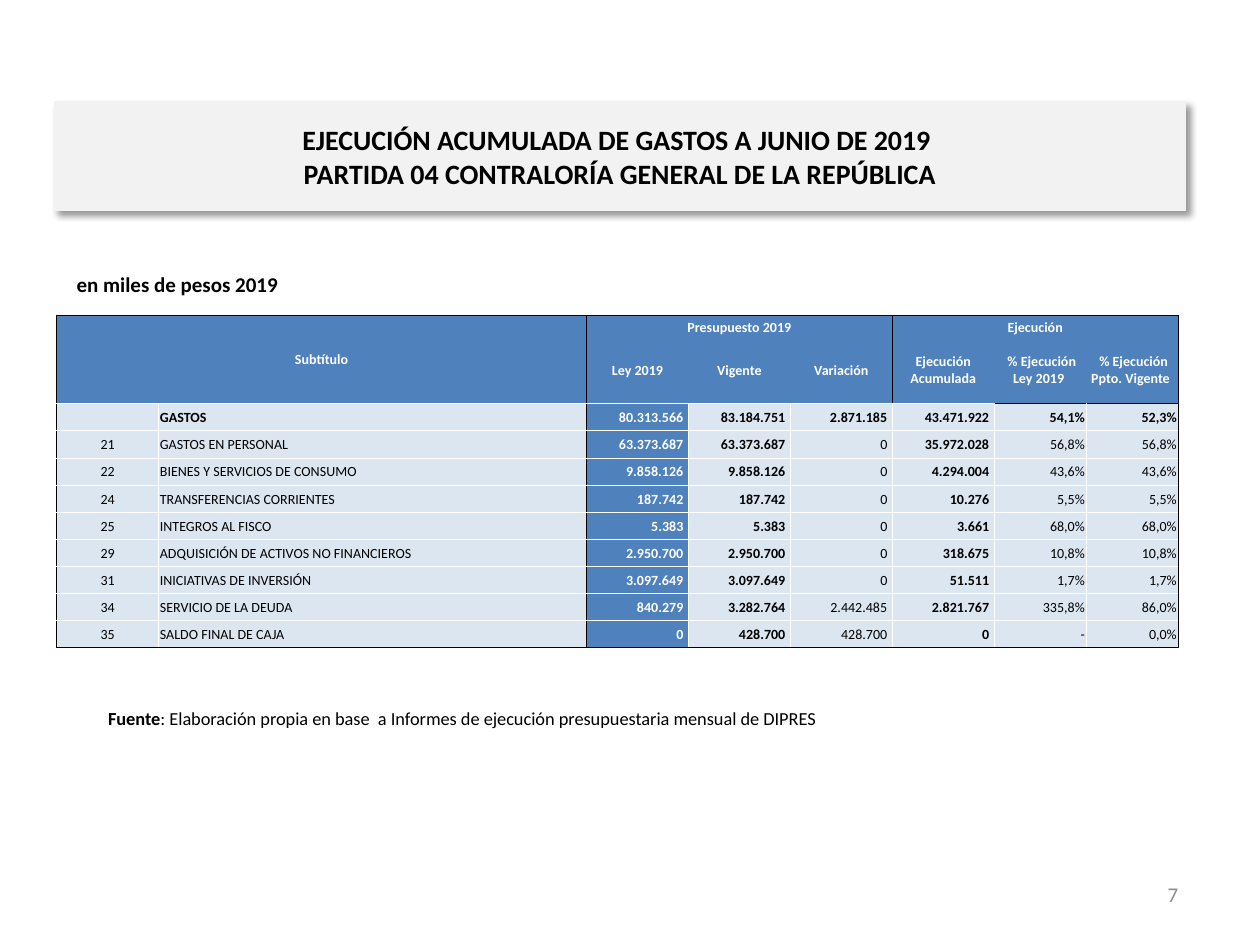
from lxml.etree import SubElement
from pptx import Presentation
from pptx.dml.color import RGBColor
from pptx.enum.text import MSO_ANCHOR, MSO_AUTO_SIZE, PP_ALIGN
from pptx.oxml.ns import qn
from pptx.util import Inches, Pt

BLACK, WHITE, BLUE, PALE = "000000", "FFFFFF", "4F81BD", "DCE6F1"
COLS = [0.81, 3.4, 0.81, 0.81, 0.81, 0.81, 0.73, 0.73]
HEAD_ROWS = [0.17, 0.53, 0.22]
GROUPS = [(0, 0, 1, 1, "Subtítulo"), (0, 2, 0, 4, "Presupuesto 2019"),
          (0, 5, 0, 7, "Ejecución")]
HEADINGS = ["Ley 2019", "Vigente", "Variación", "Ejecución Acumulada",
            " % Ejecución Ley 2019 ", " % Ejecución Ppto. Vigente "]
DATA = [
    ["", "GASTOS", "80.313.566", "83.184.751", "2.871.185", "43.471.922", "54,1%", "52,3%"],
    ["21", "GASTOS EN PERSONAL", "63.373.687", "63.373.687", "0", "35.972.028", "56,8%", "56,8%"],
    ["22", "BIENES Y SERVICIOS DE CONSUMO", "9.858.126", "9.858.126", "0", "4.294.004", "43,6%", "43,6%"],
    ["24", "TRANSFERENCIAS CORRIENTES", "187.742", "187.742", "0", "10.276", "5,5%", "5,5%"],
    ["25", "INTEGROS AL FISCO", "5.383", "5.383", "0", "3.661", "68,0%", "68,0%"],
    ["29", "ADQUISICIÓN DE ACTIVOS NO FINANCIEROS", "2.950.700", "2.950.700", "0", "318.675", "10,8%", "10,8%"],
    ["31", "INICIATIVAS DE INVERSIÓN", "3.097.649", "3.097.649", "0", "51.511", "1,7%", "1,7%"],
    ["34", "SERVICIO DE LA DEUDA", "840.279", "3.282.764", "2.442.485", "2.821.767", "335,8%", "86,0%"],
    ["35", "SALDO FINAL DE CAJA", "0", "428.700", "428.700", "0", "-", "0,0%"],
]


def rgb(value):
    return RGBColor.from_string(value)


def style(p, size, color=BLACK, bold=None, align=PP_ALIGN.LEFT):
    p.alignment = align
    p.font.name = "Calibri"
    p.font.size = Pt(size)
    p.font.bold = bold
    p.font.color.rgb = rgb(color)


def add_shadow(sp):
    effects = SubElement(sp._element.spPr, qn("a:effectLst"))
    shadow = SubElement(effects, qn("a:outerShdw"), blurRad=str(Pt(4)),
                        dist=str(Pt(3)), dir="2700000", algn="tl", rotWithShape="0")
    color = SubElement(shadow, qn("a:srgbClr"), val=BLACK)
    SubElement(color, qn("a:alpha"), val="40000")


def add_title(slide, left, top, width, height):
    sp = slide.shapes.title
    sp.left, sp.top = Inches(left), Inches(top)
    sp.width, sp.height = Inches(width), Inches(height)
    sp.fill.solid()
    sp.fill.fore_color.rgb = rgb("F2F2F2")
    sp.line.color.rgb = rgb("F2F2F2")
    sp.line.width = Pt(0.75)
    add_shadow(sp)
    tf = sp.text_frame
    tf.auto_size = MSO_AUTO_SIZE.NONE
    tf.vertical_anchor = MSO_ANCHOR.MIDDLE
    tf.text = ("EJECUCIÓN ACUMULADA DE GASTOS A JUNIO DE 2019 \v"
               "PARTIDA 04 CONTRALORÍA GENERAL DE LA REPÚBLICA")
    style(tf.paragraphs[0], 16, bold=True, align=PP_ALIGN.CENTER)


def add_text(slide, left, top, width, height, text, size, lead="",
             anchor=MSO_ANCHOR.TOP, **look):
    sp = slide.shapes.add_textbox(Inches(left), Inches(top), Inches(width), Inches(height))
    tf = sp.text_frame
    tf.word_wrap = True
    tf.vertical_anchor = anchor
    p = tf.paragraphs[0]
    if lead:
        r = p.add_run()
        r.text = lead
        r.font.bold = True
    p.add_run().text = text
    style(p, size, **look)


def set_borders(cell, colors):
    tc_pr = cell._tc.get_or_add_tcPr()
    for index, (side, color) in enumerate(zip("LRTB", colors)):
        ln = tc_pr.makeelement(qn(f"a:ln{side}"), {"w": str(Pt(0.5))})
        tc_pr.insert(index, ln)
        if color:
            fill = SubElement(ln, qn("a:solidFill"))
            SubElement(fill, qn("a:srgbClr"), val=color)
        else:
            SubElement(ln, qn("a:noFill"))


def border_colors(row, col, last_col, last_row):
    head = row < 2
    inner = None if head else WHITE
    left = BLACK if col in ((0, 2, 5) if head else (0, 2)) else inner
    right = BLACK if last_col in ((1, 4, 7) if head else (1, 7)) else inner
    top = BLACK if row == 0 or (row == 2 and col > 5) else inner
    bottom = inner
    if row == last_row or (row == 1 and col > 5):
        bottom = BLACK
    elif row == 1 or (row == 0 and col < 2):
        bottom = WHITE
    return left, right, top, bottom


def format_cell(cell, row, col, last_row):
    head = row < 2
    blue = head or col == 2
    cell.fill.solid()
    cell.fill.fore_color.rgb = rgb(BLUE if blue else PALE)
    cell.margin_left = cell.margin_top = Inches(0.01)
    cell.margin_right = Inches(0.04 if not head and 2 <= col <= 5 else 0.01)
    cell.margin_bottom = 0
    group = row == 0 and col > 1
    cell.vertical_anchor = MSO_ANCHOR.BOTTOM if group else MSO_ANCHOR.MIDDLE
    align = PP_ALIGN.RIGHT
    if head or col == 0:
        align = PP_ALIGN.CENTER
    elif col == 1:
        align = PP_ALIGN.JUSTIFY
    style(cell.text_frame.paragraphs[0], 8, WHITE if blue else BLACK,
          row <= 2 or col in (2, 3, 5), align)
    last_col = col + cell.span_width - 1 if cell.is_merge_origin else col
    set_borders(cell, border_colors(row, col, last_col, last_row))


def add_budget_table(slide, left, top, width, height):
    count = 2 + len(DATA)
    frame = slide.shapes.add_table(count, len(COLS), Inches(left), Inches(top),
                                   Inches(width), Inches(height))
    table = frame.table
    table.first_row = table.horz_banding = False
    style_id = frame._element.find(".//" + qn("a:tableStyleId"))
    style_id.text = "{2D5ABB26-0587-4C30-8999-92F81FD0307C}"
    for column, size in zip(table.columns, COLS):
        column.width = Inches(size * width / sum(COLS))
    rest = count - len(HEAD_ROWS)
    heights = HEAD_ROWS + [(height - sum(HEAD_ROWS)) / rest] * rest
    for row, size in zip(table.rows, heights):
        row.height = Inches(size)
    for row, col, end_row, end_col, text in GROUPS:
        table.cell(row, col).merge(table.cell(end_row, end_col))
        table.cell(row, col).text = text
    for row, values in enumerate([["", ""] + HEADINGS] + DATA, 1):
        for col, text in enumerate(values):
            if text:
                table.cell(row, col).text = text
    for row in range(count):
        for col in range(len(COLS)):
            format_cell(table.cell(row, col), row, col, count - 1)
    blank = table.cell(2, 0).text_frame.paragraphs[0]
    SubElement(blank._p, qn("a:endParaRPr"), sz="800")


def main():
    prs = Presentation()
    prs.slide_width, prs.slide_height = Inches(10), Inches(7.5)
    slide = prs.slides.add_slide(prs.slide_layouts[5])
    add_title(slide, 0.43, 0.81, 8.98, 0.86)
    add_text(slide, 7.12, 6.9, 2.33, 0.4, "7", 12, anchor=MSO_ANCHOR.MIDDLE,
             color="8C8C8C", align=PP_ALIGN.RIGHT)
    add_text(slide, 0.51, 2.11, 9, 0.5, "en miles de pesos 2019", 12, bold=True)
    add_text(slide, 0.76, 5.56, 8.5, 0.4,
             ": Elaboración propia en base  a Informes de ejecución "
             "presupuestaria mensual de DIPRES", 10.5, lead="Fuente")
    add_budget_table(slide, 0.45, 2.5, 8.9, 2.64)
    prs.save("out.pptx")


if __name__ == "__main__":
    main()
